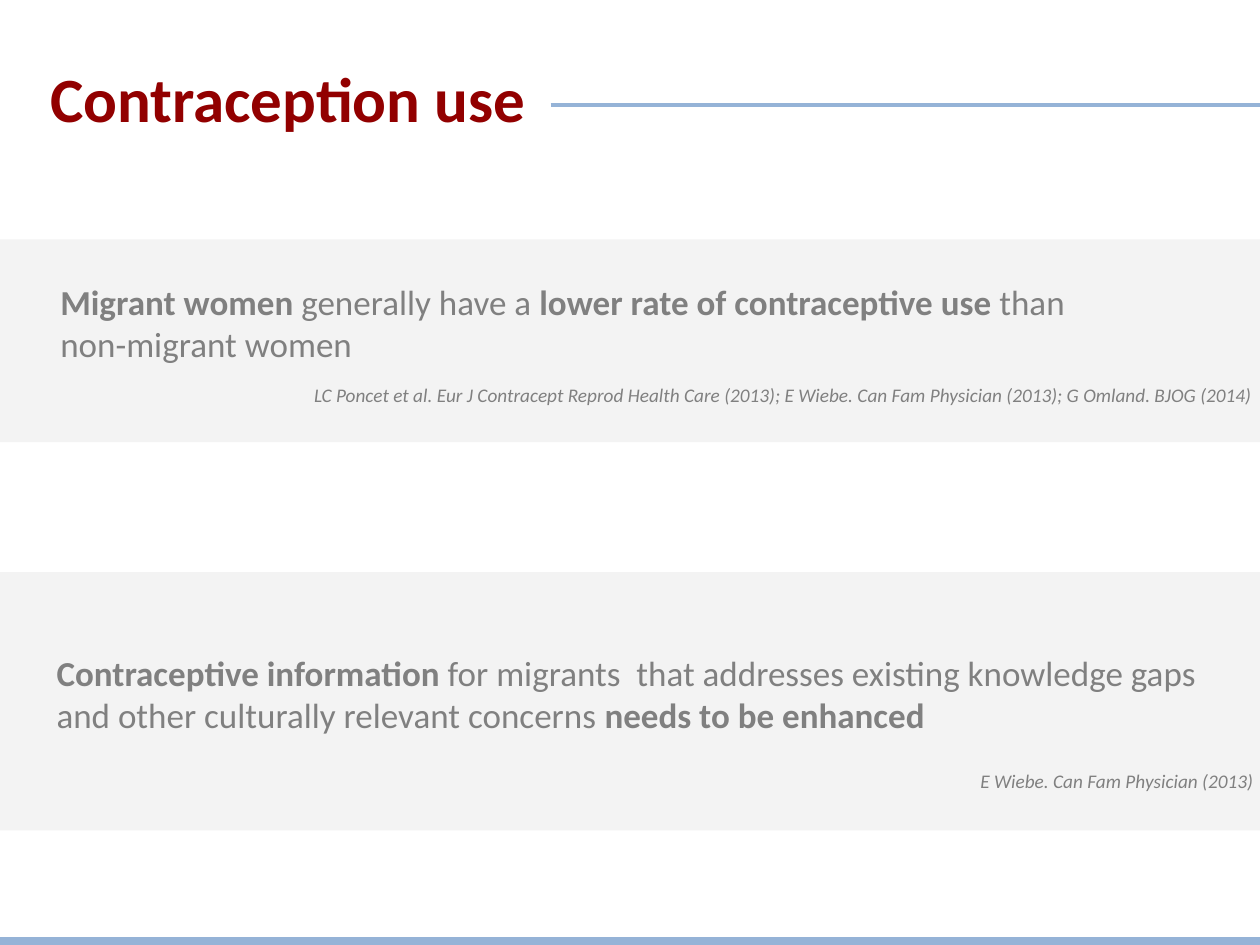
import pptx
import pptx.dml.color
import pptx.enum.shapes
import pptx.enum.text
import pptx.oxml.ns
import pptx.oxml.xmlchemy
import pptx.util
from pptx.util import Inches

RED = pptx.dml.color.RGBColor(0x92, 0x00, 0x00)
BLUE = pptx.dml.color.RGBColor(0x95, 0xB3, 0xD7)
GREY = pptx.dml.color.RGBColor(0x80, 0x80, 0x80)
PALE = pptx.dml.color.RGBColor(0xF2, 0xF2, 0xF2)
MIDDLE = pptx.enum.text.MSO_ANCHOR.MIDDLE
TOP = pptx.enum.text.MSO_ANCHOR.TOP
CENTER = pptx.enum.text.PP_ALIGN.CENTER


def add_rule(page, left, top, width, weight):
    """Draw a horizontal blue line."""
    rule = page.shapes.add_connector(
        pptx.enum.shapes.MSO_CONNECTOR.STRAIGHT,
        Inches(left), Inches(top), Inches(left + width), Inches(top))
    rule.line.color.rgb = BLUE
    rule.line.width = pptx.util.Pt(weight)
    rule._element.spPr.append(pptx.oxml.xmlchemy.OxmlElement("a:effectLst"))


def add_text(page, box, lines, size, color, anchor=TOP, wrap=True):
    """Place paragraphs given as lists of (text, bold) and return them."""
    frame = page.shapes.add_textbox(*map(Inches, box)).text_frame
    frame.word_wrap = wrap
    frame.vertical_anchor = anchor
    for index, spans in enumerate(lines):
        para = frame.add_paragraph() if index else frame.paragraphs[0]
        para.font.name = "Calibri"
        para.font.size = pptx.util.Pt(size)
        para.font.color.rgb = color
        for text, bold in spans:
            span = para.add_run()
            span.text = text
            span.font.bold = bold
    return frame.paragraphs


def add_heading(page, left, top, width, height):
    """Place the title with the line that runs on from it."""
    add_text(page, (left, top, width, height), [[("Contraception use", True)]],
             36, RED, MIDDLE)
    add_rule(page, left + 4.07, top + 0.61, 6.28, 2.25)


def add_statement(page, box, lines, text_box, citation, citation_box, anchor=TOP):
    """Place a pale band with a statement and its citation, offset from the band."""
    left, top, width, height = box
    band = page.shapes.add_shape(pptx.enum.shapes.MSO_SHAPE.RECTANGLE,
                                 *map(Inches, box))
    band.shadow.inherit = False
    band.line.fill.background()
    band.fill.solid()
    band.fill.fore_color.rgb = PALE
    color = band._element.spPr.find(".//" + pptx.oxml.ns.qn("a:srgbClr"))
    alpha = pptx.oxml.xmlchemy.OxmlElement("a:alpha")
    alpha.set("val", "88000")
    color.append(alpha)

    def inside(part):
        """Turn offsets from the band into a box on the page."""
        return left + part[0], top + part[1], part[2], part[3]

    add_text(page, inside(text_box), lines, 20, GREY, anchor)
    source = add_text(page, inside(citation_box), [[(citation, False)]],
                      11, GREY, wrap=False)[0]
    source.alignment = CENTER
    source.font.italic = True


def main():
    """Build the slide and save it."""
    deck = pptx.Presentation()
    deck.slide_width, deck.slide_height = Inches(10), Inches(7.5)
    page = deck.slides.add_slide(deck.slide_layouts[6])
    add_statement(
        page, (-0.31, 1.9, 10.95, 1.61),
        [[("Migrant women ", True), ("generally have a ", False),
          ("lower rate of contraceptive use ", True), ("than", False)],
         [("non-migrant women", False)]],
        (0.69, 0.28, 9.45, 0.77),
        "LC Poncet et al. Eur J Contracept Reprod Health Care (2013); "
        "E Wiebe. Can Fam Physician (2013); G Omland. BJOG (2014)",
        (2.67, 1.09, 7.72, 0.29))
    add_statement(
        page, (-0.41, 4.54, 10.95, 2.05),
        [[("Contraceptive information ", True),
          ("for migrants  that addresses existing knowledge gaps "
           "and other culturally relevant concerns ", False),
          ("needs to be enhanced", True)]],
        (0.76, 0.25, 9.49, 1.42),
        "E Wiebe. Can Fam Physician (2013)",
        (8.04, 1.52, 2.47, 0.29), MIDDLE)
    add_heading(page, 0.3, 0.22, 6.43, 1.11)
    add_rule(page, -0.08, 7.48, 10.24, 6)
    deck.save("out.pptx")


if __name__ == "__main__":
    main()
